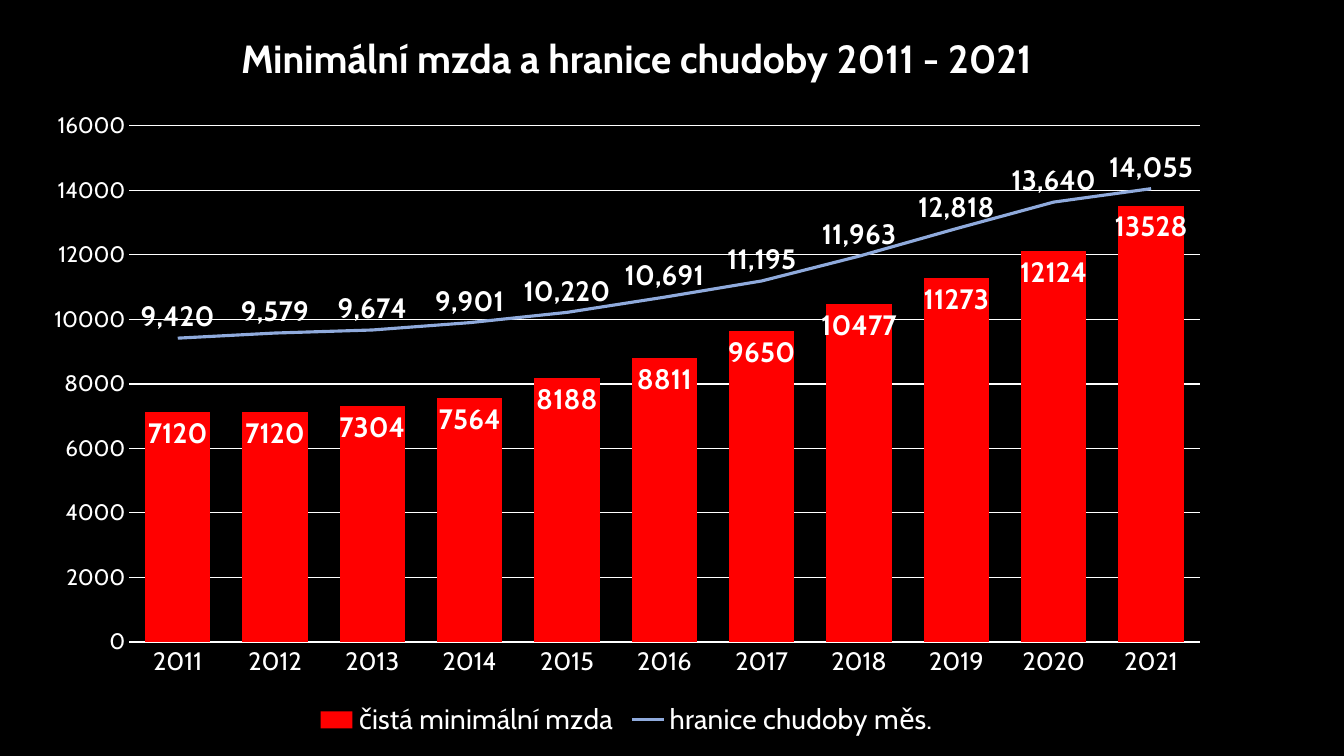
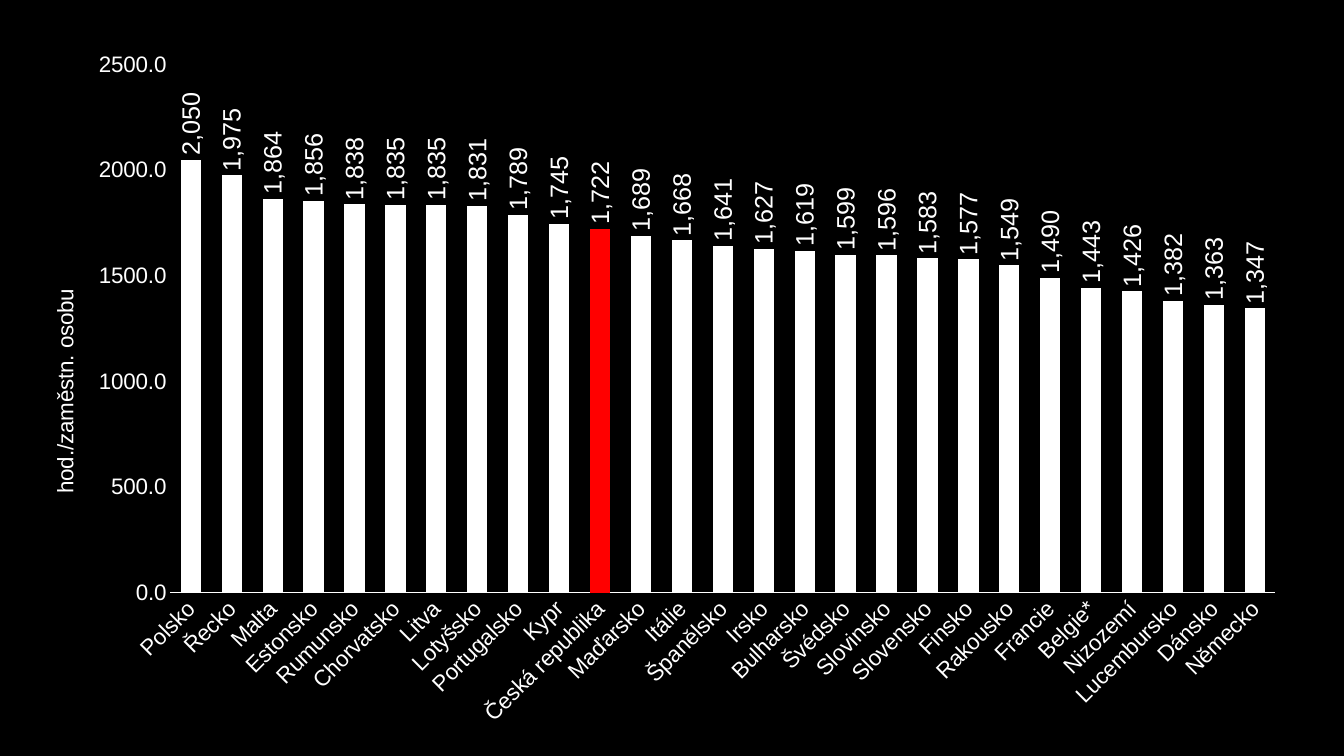
from dataclasses import dataclass
from typing import Any, NamedTuple, Optional

from lxml import etree
from pptx import Presentation
from pptx.chart.data import CategoryChartData
from pptx.dml.color import RGBColor
from pptx.enum.chart import (XL_CHART_TYPE, XL_LABEL_POSITION, XL_LEGEND_POSITION,
                             XL_MARKER_STYLE, XL_TICK_MARK)
from pptx.enum.text import MSO_ANCHOR, PP_ALIGN
from pptx.oxml.ns import qn
from pptx.oxml.xmlchemy import OxmlElement
from pptx.util import Inches, Pt

COLUMNS = XL_CHART_TYPE.COLUMN_CLUSTERED
LABEL_INSIDE = XL_LABEL_POSITION.INSIDE_END
LABEL_OUTSIDE = XL_LABEL_POSITION.OUTSIDE_END
LABEL_ABOVE = XL_LABEL_POSITION.ABOVE
LEGEND_BOTTOM = XL_LEGEND_POSITION.BOTTOM
NO_MARKER = XL_MARKER_STYLE.NONE
NO_TICK = XL_TICK_MARK.NONE
MIDDLE = MSO_ANCHOR.MIDDLE
CENTER = PP_ALIGN.CENTER

COLORS = {"background": "000000", "text": "FFFFFF", "accent": "FF0000", "line": "8FAADC"}
CABIN, ARIAL = "Cabin", "Arial"
THOUSANDS = "#,##0"
BLANK_LAYOUT = 6


class Box(NamedTuple):
    """Left, top, width and height in inches."""
    left: float
    top: float
    width: float
    height: float

    def lengths(self) -> list:
        return [Inches(v) for v in self]


@dataclass
class ChartSpec:
    frame: Box
    plot: Box
    categories: list
    series: dict
    font: str
    category_size: int
    value_size: int
    value_format: str
    maximum: int
    step: int
    gap: int
    overlap: int
    gridlines: bool = False


WAGES = ChartSpec(
    frame=Box(0.29, 1, 11.85, 6.37), plot=Box(1.28, 1.25, 10.62, 5.12),
    categories=[str(year) for year in range(2011, 2022)],
    series={
        "čistá minimální mzda": [7120, 7120, 7304, 7564, 8188, 8811, 9650, 10477,
                                 11273, 12124, 13528],
        "hranice chudoby měs.": [9420, 9579, 9674, 9901, 10220, 10691, 11195, 11963,
                                 12818, 13640, 14055],
    },
    font=CABIN, category_size=18, value_size=16, value_format="General",
    maximum=16000, step=2000, gap=49, overlap=34, gridlines=True,
)

HOURS_BY_COUNTRY = {
    "Polsko": 2050, "Řecko": 1975, "Malta": 1864, "Estonsko": 1856, "Rumunsko": 1838,
    "Chorvatsko": 1835, "Litva": 1835, "Lotyšsko": 1831, "Portugalsko": 1789,
    "Kypr": 1745, "Česká republika": 1722, "Maďarsko": 1689, "Itálie": 1668,
    "Španělsko": 1641, "Irsko": 1627, "Bulharsko": 1619, "Švédsko": 1599,
    "Slovinsko": 1596, "Slovensko": 1583, "Finsko": 1577, "Rakousko": 1549,
    "Francie": 1490, "Belgie*": 1443, "Nizozemí": 1426, "Lucembursko": 1382,
    "Dánsko": 1363, "Německo": 1347,
}
HIGHLIGHTED_COUNTRY = "Česká republika"

HOURS = ChartSpec(
    frame=Box(0.21, 0.39, 12.7, 6.96), plot=Box(1.69, 0.64, 10.96, 5.24),
    categories=list(HOURS_BY_COUNTRY),
    series={"Series 1": list(HOURS_BY_COUNTRY.values())},
    font=ARIAL, category_size=16, value_size=16, value_format="0.0",
    maximum=2500, step=500, gap=102, overlap=-27,
)


def rgb(name: str) -> RGBColor:
    return RGBColor.from_string(COLORS[name])


def set_fill(fill: Any, color: str) -> None:
    fill.solid()
    fill.fore_color.rgb = rgb(color)


def set_line(line: Any, color: str, width: float = 0.75) -> None:
    set_fill(line.fill, color)
    line.width = Pt(width)


def set_font(font: Any, size: int, name: str, bold: bool = False) -> None:
    font.size, font.name, font.bold = Pt(size), name, bold
    font.color.rgb = rgb("text")


def rotate_text(element: Any, degrees: int) -> None:
    body = element.xpath("c:txPr/a:bodyPr | c:tx/c:rich/a:bodyPr")[0]
    body.set("rot", str(degrees * 60000))
    body.set("vert", "horz")


def set_layout(element: Any, index: int, **values: Any) -> None:
    """Place a chart part by hand, as fractions of the chart frame."""
    for old in element.findall(qn("c:layout")):
        element.remove(old)
    layout = OxmlElement("c:layout")
    manual = etree.SubElement(layout, qn("c:manualLayout"))
    for tag, value in values.items():
        etree.SubElement(manual, qn(f"c:{tag}")).set("val", str(value))
    element.insert(index, layout)


def add_title(slide: Any, text: str, *, box: Box, size: int, font: str) -> None:
    tf = slide.shapes.add_textbox(*box.lengths()).text_frame
    tf.word_wrap = True
    tf.vertical_anchor = MIDDLE
    p = tf.paragraphs[0]
    p.alignment = CENTER
    p.line_spacing = 0.9
    r = p.add_run()
    r.text = text
    set_font(r.font, size, font, bold=True)


def add_column_chart(slide: Any, spec: ChartSpec) -> Any:
    data = CategoryChartData()
    data.categories = spec.categories
    for name, values in spec.series.items():
        data.add_series(name, values)
    chart = slide.shapes.add_chart(COLUMNS, *spec.frame.lengths(), data).chart
    chart.has_title = False
    chart.has_legend = False
    set_font(chart.font, 10, ARIAL)

    plot = chart.plots[0]
    plot.gap_width, plot.overlap = spec.gap, spec.overlap
    plot.vary_by_categories = False

    category_axis, value_axis = chart.category_axis, chart.value_axis
    for axis, size in ((category_axis, spec.category_size), (value_axis, spec.value_size)):
        axis.major_tick_mark = axis.minor_tick_mark = NO_TICK
        set_font(axis.tick_labels.font, size, spec.font)
    set_line(category_axis.format.line, "text")
    value_axis.format.line.fill.background()
    value_axis.minimum_scale, value_axis.maximum_scale = 0, spec.maximum
    value_axis.major_unit = spec.step
    value_axis.tick_labels.number_format = spec.value_format
    value_axis.tick_labels.number_format_is_linked = False
    value_axis.has_major_gridlines = spec.gridlines
    if spec.gridlines:
        set_line(value_axis.major_gridlines.format.line, "text")

    frame, area = spec.frame, spec.plot
    set_layout(chart._chartSpace.chart.plotArea, 0, layoutTarget="inner",
               xMode="edge", yMode="edge",
               x=(area.left - frame.left) / frame.width,
               y=(area.top - frame.top) / frame.height,
               w=area.width / frame.width, h=area.height / frame.height)
    return chart


def move_last_series_to_line(chart: Any) -> Any:
    """Turn the last column series into a line on the same axes."""
    bars = chart._chartSpace.chart.plotArea.find(qn("c:barChart"))
    ser = bars.findall(qn("c:ser"))[-1]
    for invert in ser.findall(qn("c:invertIfNegative")):
        ser.remove(invert)
    lines = OxmlElement("c:lineChart")
    etree.SubElement(lines, qn("c:grouping")).set("val", "standard")
    etree.SubElement(lines, qn("c:varyColors")).set("val", "0")
    lines.append(ser)
    etree.SubElement(lines, qn("c:marker")).set("val", "1")
    for axis_id in bars.findall(qn("c:axId")):
        etree.SubElement(lines, qn("c:axId")).set("val", axis_id.get("val"))
    bars.addnext(lines)
    return chart.plots[1].series[0]


def label_values(series: Any, position: Any, *, size: int, font: str, bold: bool = False,
                 number_format: Optional[str] = None, rotation: int = 0) -> None:
    labels = series.data_labels
    set_font(labels.font, size, font, bold)
    labels.show_value = True
    labels.position = position
    if number_format:
        labels.number_format = number_format
        labels.number_format_is_linked = False
    if rotation:
        rotate_text(labels._element, rotation)


def build_wage_slide(slide: Any) -> None:
    add_title(slide, "Minimální mzda a hranice chudoby 2011 - 2021",
              box=Box(1.86, 0.21, 8.9, 0.79), size=28, font=CABIN)
    chart = add_column_chart(slide, WAGES)
    poverty_line = move_last_series_to_line(chart)
    poverty_line.smooth = False
    poverty_line.marker.style = NO_MARKER
    set_line(poverty_line.format.line, "line", 2.25)
    label_values(poverty_line, LABEL_ABOVE, size=20, font=CABIN, bold=True,
                 number_format=THOUSANDS)
    wage = chart.plots[0].series[0]
    set_fill(wage.format.fill, "accent")
    label_values(wage, LABEL_INSIDE, size=20, font=CABIN, bold=True)

    chart.has_legend = True
    chart.legend.position = LEGEND_BOTTOM
    chart.legend.include_in_layout = False
    set_font(chart.legend.font, 20, CABIN)


def build_hours_slide(slide: Any) -> None:
    chart = add_column_chart(slide, HOURS)
    hours = chart.plots[0].series[0]
    set_fill(hours.format.fill, "text")
    highlighted = hours.points[HOURS.categories.index(HIGHLIGHTED_COUNTRY)]
    set_fill(highlighted.format.fill, "accent")
    label_values(hours, LABEL_OUTSIDE, size=18, font=ARIAL,
                 number_format=THOUSANDS, rotation=-90)
    rotate_text(chart.category_axis._element, -45)

    title = chart.value_axis.axis_title
    r = title.text_frame.paragraphs[0].add_run()
    r.text = "hod./zaměstn. osobu"
    set_font(r.font, 16, ARIAL)
    rotate_text(title._element, -90)
    set_layout(title._element, 1, xMode="edge", yMode="edge", x=0.02, y=0.35)


def main() -> None:
    prs = Presentation()
    prs.slide_width, prs.slide_height = Inches(13.33), Inches(7.5)
    set_fill(prs.slide_master.background.fill, "background")
    for build in (build_wage_slide, build_hours_slide):
        build(prs.slides.add_slide(prs.slide_layouts[BLANK_LAYOUT]))
    prs.save("out.pptx")


if __name__ == "__main__":
    main()
